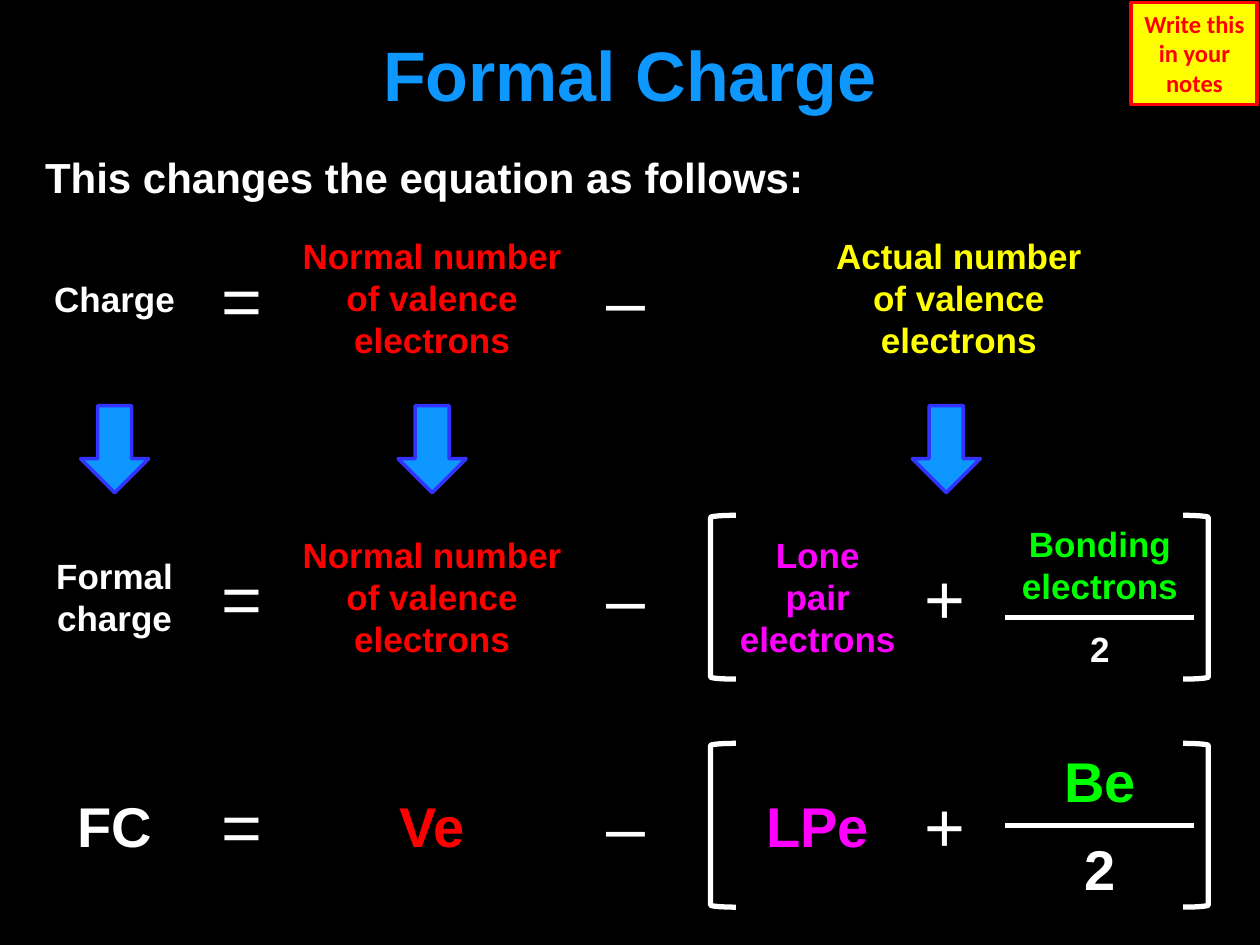
from lxml.etree import SubElement
from pptx import Presentation
from pptx.dml.color import RGBColor
from pptx.enum.shapes import MSO_CONNECTOR, MSO_SHAPE
from pptx.enum.text import MSO_ANCHOR, MSO_AUTO_SIZE, PP_ALIGN
from pptx.oxml.ns import qn
from pptx.util import Inches, Pt

COLORS = {
    "background": "000000",
    "accent": "0D97FF",
    "arrow_edge": "3333FF",
    "plain": "FFFFFF",
    "valence": "FF0000",
    "actual": "FFFF00",
    "lone": "FF00FF",
    "bonding": "00FF00",
}
COLUMNS = {
    "charge": (0.26, 1.3),
    "equals": (1.62, 0.6),
    "valence": (2.28, 2.3),
    "minus": (4.5, 0.94),
    "actual": (6.51, 2.2),
    "lone": (5.74, 1.5),
    "plus": (7.03, 0.94),
    "fraction": (7.98, 1.5),
}
VALENCE_TEXT = "Normal number of valence electrons"


def color(key):
    return RGBColor.from_string(COLORS[key])


def write(frame, lines, size, font="Arial", bold=True, align=PP_ALIGN.CENTER):
    frame.word_wrap = True
    for index, (text, key) in enumerate(lines):
        paragraph = frame.paragraphs[0] if index == 0 else frame.add_paragraph()
        paragraph.alignment = align
        run = paragraph.add_run()
        run.text = text
        run.font.name = font
        run.font.size = Pt(size)
        run.font.bold = bold
        run.font.color.rgb = color(key)


def add_text(shapes, left, top, width, height, lines, size, **style):
    label = shapes.add_textbox(Inches(left), Inches(top), Inches(width), Inches(height))
    write(label.text_frame, lines, size, **style)
    label.text_frame.auto_size = MSO_AUTO_SIZE.SHAPE_TO_FIT_TEXT
    return label


def add_term(shapes, column, middle, height, lines, size, **style):
    left, width = COLUMNS[column]
    return add_text(shapes, left, middle - height / 2, width, height, lines, size, **style)


def add_operator(shapes, column, middle, symbol):
    add_term(shapes, column, middle, 0.77, [(symbol, "plain")], 40, bold=False)


def add_outline(shapes, kind, left, top, width, height, edge, weight, fill=None):
    outline = shapes.add_shape(kind, Inches(left), Inches(top), Inches(width), Inches(height))
    outline.shadow.inherit = False
    outline.line.color.rgb = color(edge)
    outline.line.width = Pt(weight)
    if fill:
        outline.fill.solid()
        outline.fill.fore_color.rgb = color(fill)
    else:
        outline.fill.background()
    return outline


def add_brackets(shapes, middle):
    for kind, left in ((MSO_SHAPE.LEFT_BRACKET, 5.64), (MSO_SHAPE.RIGHT_BRACKET, 9.39)):
        add_outline(shapes, kind, left, middle - 0.65, 0.2, 1.3, "plain", 3)


def add_fraction(shapes, middle, height, numerator, size, bar_y):
    lines = [(text, "bonding") for text in numerator] + [("2", "plain")]
    fraction = add_term(shapes, "fraction", middle, height, lines, size)
    fraction.text_frame.paragraphs[-1].space_before = Pt(12)
    left, width = COLUMNS["fraction"]
    bar = shapes.add_connector(
        MSO_CONNECTOR.STRAIGHT, Inches(left + width), Inches(bar_y), Inches(left), Inches(bar_y)
    )
    bar.line.color.rgb = color("plain")
    bar.line.width = Pt(3)
    SubElement(bar.line._get_or_add_ln().getparent(), qn("a:effectLst"))


def start_equation(slide, middle):
    shapes = slide.shapes.add_group_shape().shapes
    add_operator(shapes, "equals", middle, "=")
    add_operator(shapes, "minus", middle, "‒")
    return shapes


def add_charge_equation(slide, middle):
    shapes = start_equation(slide, middle)
    add_term(shapes, "charge", middle, 0.44, [("Charge", "plain")], 20)
    add_term(shapes, "valence", middle, 1.11, [(VALENCE_TEXT, "valence")], 20)
    add_term(shapes, "actual", middle, 1.11, [("Actual number of valence electrons", "actual")], 20)


def add_formal_equation(slide, middle):
    shapes = start_equation(slide, middle)
    add_term(shapes, "charge", middle, 0.77, [("Formal charge", "plain")], 20)
    add_term(shapes, "valence", middle, 1.11, [(VALENCE_TEXT, "valence")], 20)
    lone_pair = [(text, "lone") for text in ("Lone", "pair", "electrons")]
    add_term(shapes, "lone", middle, 1.11, lone_pair, 20)
    add_operator(shapes, "plus", middle, "+")
    add_fraction(shapes, middle, 1.28, ["Bonding", "electrons"], 20, 4.9)
    add_brackets(shapes, middle)


def add_symbol_equation(slide, middle):
    shapes = start_equation(slide, middle)
    for column, text, key in (
        ("charge", "FC", "plain"),
        ("valence", "Ve", "valence"),
        ("lone", "LPe", "lone"),
    ):
        add_term(shapes, column, middle, 0.64, [(text, key)], 32)
    add_operator(shapes, "plus", middle, "+")
    add_fraction(shapes, middle, 1.35, ["Be"], 32, middle)
    add_brackets(shapes, middle)


def add_note(slide):
    note = add_outline(
        slide.shapes, MSO_SHAPE.RECTANGLE, 8.98, 0.02, 1, 0.81, "valence", 2.25, "actual"
    )
    write(note.text_frame, [("Write this in your notes", "valence")], 14, font="Calibri")
    note.text_frame.vertical_anchor = MSO_ANCHOR.TOP
    note.text_frame.auto_size = MSO_AUTO_SIZE.SHAPE_TO_FIT_TEXT


def main():
    presentation = Presentation()
    presentation.slide_width = Inches(10)
    presentation.slide_height = Inches(7.5)
    slide = presentation.slides.add_slide(presentation.slide_layouts[6])
    slide.background.fill.solid()
    slide.background.fill.fore_color.rgb = color("background")

    title = add_text(slide.shapes, 0.2, 0.18, 9.6, 0.8, [("Formal Charge", "accent")], 40)
    title.text_frame.auto_size = MSO_AUTO_SIZE.NONE
    title.text_frame.vertical_anchor = MSO_ANCHOR.MIDDLE
    intro = [("This changes the equation as follows:", "plain")]
    add_text(slide.shapes, 0.26, 1.15, 8.9, 0.5, intro, 24, align=PP_ALIGN.LEFT)

    add_charge_equation(slide, 2.37)
    add_formal_equation(slide, 4.74)
    add_symbol_equation(slide, 6.55)
    for left in (0.64, 3.16, 7.24):
        add_outline(
            slide.shapes, MSO_SHAPE.DOWN_ARROW, left, 3.22, 0.54, 0.69, "arrow_edge", 2, "accent"
        )
    add_note(slide)
    presentation.save("out.pptx")


if __name__ == "__main__":
    main()
